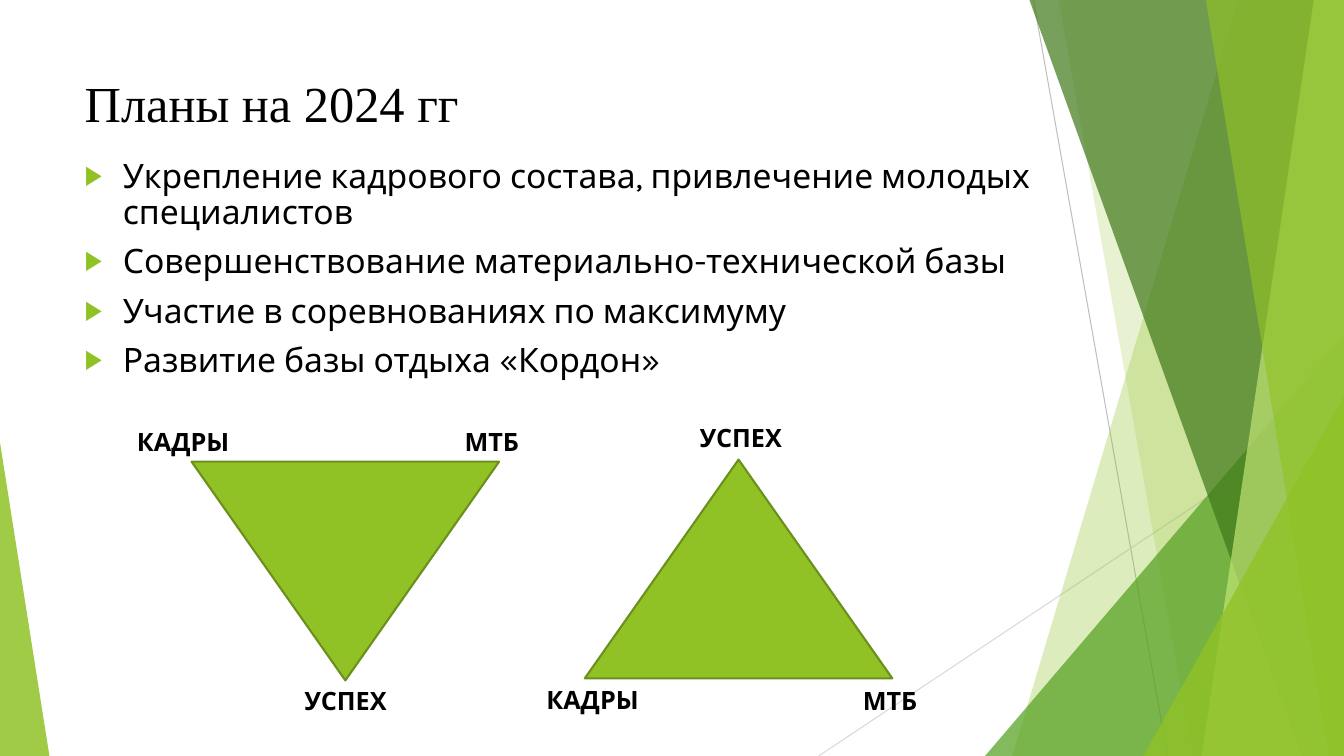
from lxml import etree
from pptx import Presentation
from pptx import util as u
from pptx.dml import color
from pptx.enum import shapes, text
from pptx.oxml import ns

HEX = {
    "lime": "90C226", "pale": "C0E474", "green": "54A021", "dark": "3F7819",
    "edge": "6B901C", "grey": "BFBFBF", "mist": "D9D9D9", "black": "000000",
}
WIDE, HIGH = 13.33, 7.5

PLANS = [
    "Укрепление кадрового состава, привлечение молодых специалистов",
    "Совершенствование материально-технической базы",
    "Участие в соревнованиях по максимуму",
    "Развитие базы отдыха «Кордон»",
]
LABELS = [
    ("КАДРЫ", 1.26, 4.18, 1.29), ("МТБ", 4.51, 4.18, 1.29),
    ("УСПЕХ", 2.92, 6.75, 1.02), ("КАДРЫ", 5.32, 6.74, 1.29),
    ("МТБ", 8.46, 6.75, 1.29), ("УСПЕХ", 6.84, 4.14, 1.02),
]
LINES = [
    (10.25, 0, 11.58, HIGH, "grey"),
    (WIDE, 4.03, 8.12, HIGH, "mist"),
]
# Each facet: points, colour, opacity in percent
FACETS = [
    ([(12.28, 0), (WIDE, 0), (WIDE, HIGH), (10.04, HIGH)], "lime", 30),
    ([(10.5, 0), (WIDE, 0), (WIDE, HIGH), (11.83, HIGH)], "lime", 20),
    ([(WIDE, 3.33), (WIDE, HIGH), (9.77, HIGH)], "green", 72),
    ([(10.21, 0), (WIDE, 0), (WIDE, HIGH), (12.91, HIGH)], "dark", 70),
    ([(13.03, 0), (WIDE, 0), (WIDE, HIGH), (11.92, HIGH)], "pale", 70),
    ([(11.96, 0), (WIDE, 0), (WIDE, HIGH), (13.18, HIGH)], "lime", 65),
    ([(WIDE, 3.93), (WIDE, HIGH), (11.34, HIGH)], "lime", 80),
    ([(0, 4.39), (0.49, HIGH), (0, HIGH)], "lime", 85),
]


def rgb(name):
    return color.RGBColor.from_string(HEX[name])


def sub(node, tag, **attrs):
    return etree.SubElement(node, ns.qn(tag), attrs)


def style(font, **form):
    for key, value in form.items():
        setattr(font, key, value)
    font.color.rgb = rgb("black")


def paint(shape, name):
    shape.shadow.inherit = False
    shape.fill.solid()
    shape.fill.fore_color.rgb = rgb(name)


def line(slide, x1, y1, x2, y2, name):
    ends = [u.Inches(n) for n in (x1, y1, x2, y2)]
    rule = slide.shapes.add_connector(shapes.MSO_CONNECTOR.STRAIGHT, *ends)
    rule.line.color.rgb = rgb(name)
    rule.line.width = u.Pt(0.75)
    sub(rule._element.spPr, "a:effectLst")


def facet(slide, points, name, alpha):
    spots = [(u.Inches(x), u.Inches(y)) for x, y in points]
    pen = slide.shapes.build_freeform(*spots[0])
    pen.add_line_segments(spots[1:], close=True)
    shape = pen.convert_to_shape()
    paint(shape, name)
    shape.line.fill.background()
    tint = shape._element.spPr.find(".//" + ns.qn("a:srgbClr"))
    sub(tint, "a:alpha", val=str(alpha * 1000))


def triangle(slide, left, top, turn=0):
    shape = slide.shapes.add_shape(
        shapes.MSO_SHAPE.ISOSCELES_TRIANGLE, u.Inches(left), u.Inches(top),
        u.Inches(3.05), u.Inches(2.17))
    paint(shape, "lime")
    shape.line.color.rgb = rgb("edge")
    shape.line.width = u.Pt(1.5)
    shape.rotation = turn


def box(slide, left, top, width, height):
    frame = slide.shapes.add_textbox(
        *(u.Inches(n) for n in (left, top, width, height))).text_frame
    frame.word_wrap = True
    return frame


def label(slide, words, left, top, width):
    para = box(slide, left, top, width, 0.4).paragraphs[0]
    para.text = words
    style(para.runs[0].font, name="Karla", size=u.Pt(18), bold=True)


def bullet(para):
    props = para._p.get_or_add_pPr()
    dent = u.Inches(0.38)
    props.set("marL", str(dent))
    props.set("indent", str(-dent))
    sub(sub(props, "a:buClr"), "a:srgbClr", val=HEX["lime"])
    sub(props, "a:buSzPct", val="80000")
    sub(props, "a:buFont", typeface="Arial")
    sub(props, "a:buChar", char="▶")


def plans(slide):
    frame = box(slide, 0.74, 1.54, 9.81, 2.61)
    for i, words in enumerate(PLANS):
        para = frame.add_paragraph() if i else frame.paragraphs[0]
        para.text = words
        bullet(para)
        para.line_spacing = 0.88
        if i:
            para.space_before = u.Pt(10)
        style(para.runs[0].font, name="Karla", size=u.Pt(24))


def heading(slide):
    title = slide.shapes.title
    spot = {"left": 0.74, "top": 0.67, "width": 9.4, "height": 1.44}
    for key, value in spot.items():
        setattr(title, key, u.Inches(value))
    frame = title.text_frame
    frame.text = "Планы на 2024 гг"
    frame.vertical_anchor = text.MSO_ANCHOR.TOP
    frame.auto_size = text.MSO_AUTO_SIZE.NONE
    para = frame.paragraphs[0]
    para.alignment = text.PP_ALIGN.LEFT
    style(para.runs[0].font, name="Times New Roman", size=u.Pt(36))


def main():
    deck = Presentation()
    deck.slide_width, deck.slide_height = u.Inches(WIDE), u.Inches(HIGH)
    slide = deck.slides.add_slide(deck.slide_layouts[5])
    for item in LINES:
        line(slide, *item)
    for item in FACETS:
        facet(slide, *item)
    heading(slide)
    plans(slide)
    triangle(slide, 5.8, 4.56)
    triangle(slide, 1.9, 4.58, turn=180)
    for item in LABELS:
        label(slide, *item)
    deck.save("out.pptx")


if __name__ == "__main__":
    main()
